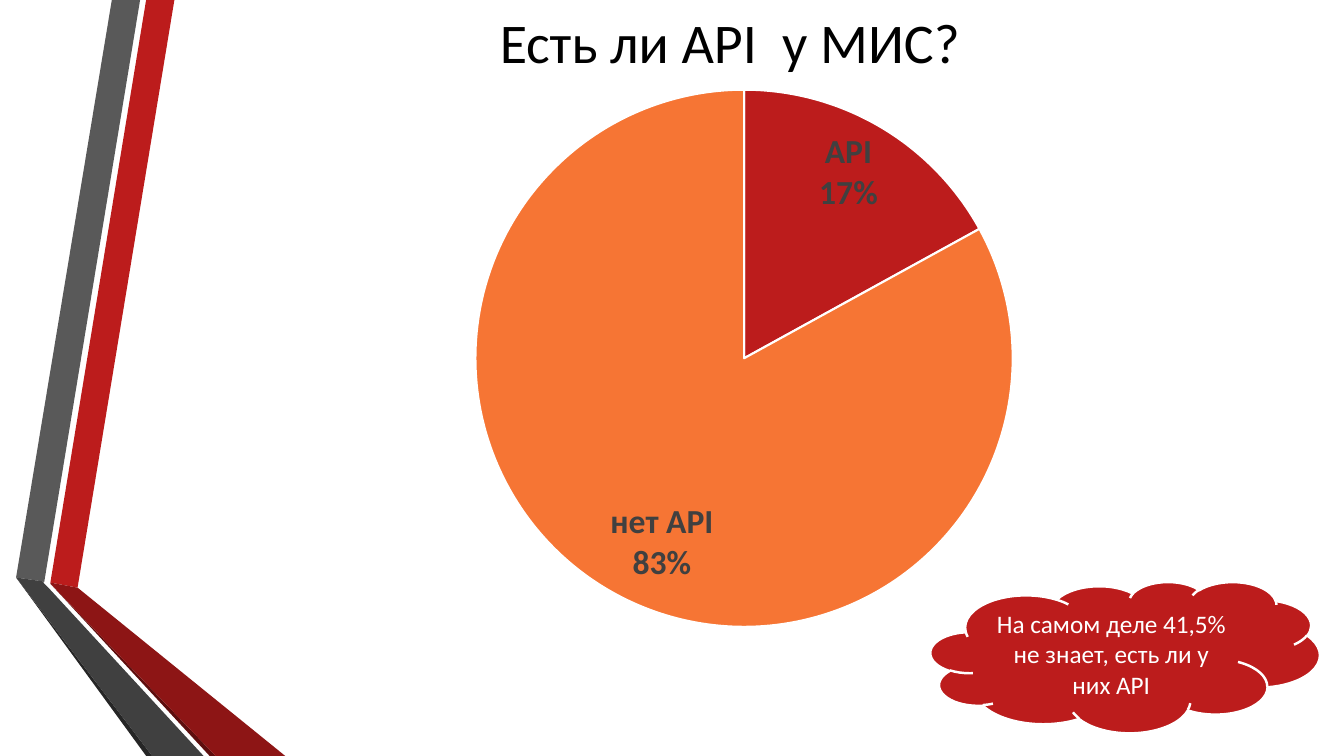
from lxml import etree
from pptx import Presentation
from pptx import util as u
from pptx.chart.data import CategoryChartData
from pptx.dml.color import RGBColor
from pptx.enum import chart as ch, shapes, text
from pptx.oxml import parse_xml

WIDTH, HEIGHT = 13.33, 7.5
FONT = "Calibri"
RED, ORANGE, WHITE, BLACK, GRAY = "BC1C1C", "F67534", "FFFFFF", "000000", "404040"
CHART_NS = "http://schemas.openxmlformats.org/drawingml/2006/chart"

# Ribbon bands, back to front: colour and corners in hundredths of an inch
RIBBONS = [
    (RED, [(50, 578), (77, 583), (173, 0), (145, 0)]),
    ("595959", [(139, 0), (111, 0), (16, 573), (44, 577)]),
    ("262626", [(16, 573), (145, 750), (151, 750)]),
    ("5E0E0E", [(50, 579), (208, 750), (214, 750)]),
    ("8D1515", [(50, 578), (50, 579), (214, 750), (283, 750), (77, 583)]),
    (GRAY, [(202, 750), (48, 583), (43, 578), (44, 577), (16, 573), (151, 750)]),
]


def rgb(hex_color):
    return RGBColor.from_string(hex_color)


def inches(box):
    return [u.Inches(length) for length in box]


def paint(part, color):
    part.fill.solid()
    part.fill.fore_color.rgb = rgb(color)


def set_font(font, size, color, bold=False):
    formats = {"name": FONT, "size": u.Pt(size), "bold": bold}
    for key, value in formats.items():
        setattr(font, key, value)
    font.color.rgb = rgb(color)


def write_centred(frame, wording, size, color):
    formats = {"word_wrap": True, "vertical_anchor": text.MSO_ANCHOR.MIDDLE}
    for key, value in formats.items():
        setattr(frame, key, value)
    paragraph = frame.paragraphs[0]
    paragraph.alignment = text.PP_ALIGN.CENTER
    run = paragraph.add_run()
    run.text = wording
    set_font(run.font, size, color)


def add_ribbons(slide, left, top):
    origin_x, origin_y = round(left * 100), round(top * 100)
    for color, corners in RIBBONS:
        points = [(origin_x + x, origin_y + y) for x, y in corners]
        builder = slide.shapes.build_freeform(*points[0], scale=u.Inches(0.01))
        builder.add_line_segments(points[1:], close=True)
        band = builder.convert_to_shape()
        band.shadow.inherit = False
        paint(band, color)
        band.line.fill.background()


def add_title(slide, box, wording):
    title = slide.shapes.add_textbox(*inches(box))
    write_centred(title.text_frame, wording, 40, BLACK)


def place_plot(chart, x, y, w, h):
    """Fix the inner plot area, given as shares of the chart."""
    plot_area = chart.plots[0]._element.getparent()
    for layout in plot_area.findall(f"{{{CHART_NS}}}layout"):
        plot_area.remove(layout)
    layout = parse_xml(
        f'<c:layout xmlns:c="{CHART_NS}"><c:manualLayout>'
        '<c:layoutTarget val="inner"/><c:xMode val="edge"/><c:yMode val="edge"/>'
        '</c:manualLayout></c:layout>')
    for tag, share in zip("xywh", (x, y, w, h)):
        etree.SubElement(layout[0], f"{{{CHART_NS}}}{tag}").set("val", str(share))
    plot_area.insert(0, layout)


def add_api_pie(slide, box, shares):
    data = CategoryChartData(number_format="0%")
    data.categories = list(shares)
    data.add_series("Series 1", list(shares.values()))
    chart = slide.shapes.add_chart(ch.XL_CHART_TYPE.PIE, *inches(box), data).chart
    chart.has_legend = chart.has_title = False
    set_font(chart.font, 10, BLACK)
    place_plot(chart, 0.13, 0.03, 0.74, 0.94)

    plot = chart.plots[0]
    plot.vary_by_categories = True
    for index, color in enumerate((RED, ORANGE)):
        slice_format = plot.series[0].points[index].format
        paint(slice_format, color)
        slice_format.line.color.rgb = rgb(WHITE)
        slice_format.line.width = u.Pt(1.5)

    labels = plot.series[0].data_labels
    formats = {"show_value": True, "show_category_name": True,
               "show_percentage": False, "show_legend_key": False,
               "number_format": "0%", "number_format_is_linked": False,
               "position": ch.XL_LABEL_POSITION.INSIDE_END}
    for key, value in formats.items():
        setattr(labels, key, value)
    set_font(labels.font, 24, GRAY, bold=True)
    separator = etree.Element(f"{{{CHART_NS}}}separator")
    separator.text = "\n"
    labels._element.find(f"{{{CHART_NS}}}showBubbleSize").addnext(separator)


def add_remark(slide, box, wording):
    cloud = slide.shapes.add_shape(shapes.MSO_SHAPE.CLOUD, *inches(box))
    cloud.shadow.inherit = False
    paint(cloud, RED)
    cloud.line.color.rgb = rgb(WHITE)
    cloud.line.width = u.Pt(1.75)
    write_centred(cloud.text_frame, wording, 18, WHITE)


def main():
    deck = Presentation()
    deck.slide_width, deck.slide_height = inches((WIDTH, HEIGHT))
    slide = deck.slides.add_slide(deck.slide_layouts[6])
    add_ribbons(slide, 0, 0)
    add_title(slide, (1.76, 0, 10.96, 0.82), "Есть ли API  у МИС?")
    add_api_pie(slide, (3.76, 0.72, 7.24, 5.67), {"API": 0.17, "нет API": 0.83})
    add_remark(slide, (9.23, 5.77, 3.86, 1.5),
               "На самом деле 41,5% не знает, есть ли у них API")
    deck.save("out.pptx")


if __name__ == "__main__":
    main()
